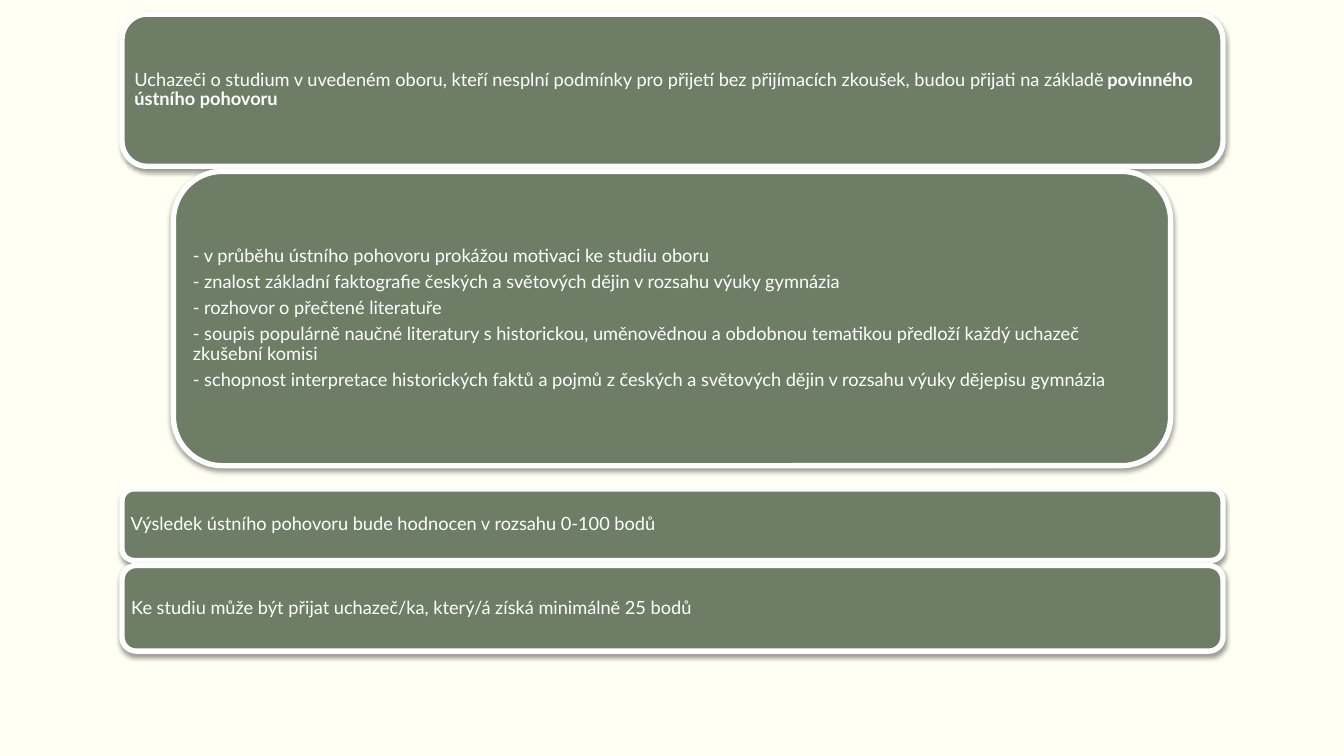
from lxml import etree
from pptx import Presentation
from pptx.dml.color import RGBColor
from pptx.enum import shapes, text
from pptx.oxml import ns
from pptx.util import Inches, Pt

GREEN, WHITE, CREAM, BLACK = "6D7D66", "FFFFFF", "FFFFF3", "000000"
WIDE = (1.21, 10.92)
NARROW = (1.72, 9.89)

# Each panel: (left, width), top, height, paragraphs made of (wording, bold) spans
PANELS = [
    (WIDE, 0.14, 1.51, [[
        ("Uchazeči o studium v uvedeném oboru, kteří nesplní podmínky pro přijetí "
         "bez přijímacích zkoušek, budou přijati na základě", False),
        (" povinného ústního pohovoru", True)]]),
    (NARROW, 1.7, 2.92, [
        [("- v průběhu ústního pohovoru prokážou motivaci ke studiu oboru", False)],
        [("- znalost základní faktografie českých a světových dějin "
          "v rozsahu výuky gymnázia", False)],
        [("- rozhovor o přečtené literatuře", False)],
        [("- soupis populárně naučné literatury s historickou, uměnovědnou a obdobnou "
          "tematikou předloží každý uchazeč zkušební komisi", False)],
        [("- schopnost interpretace historických faktů a pojmů z českých a světových "
          "dějin v rozsahu výuky dějepisu gymnázia", False)]]),
    (WIDE, 4.85, 0.71, [[
        ("Výsledek ústního pohovoru bude hodnocen v rozsahu 0-100 bodů", False)]]),
    (WIDE, 5.61, 0.85, [[
        ("Ke studiu může být přijat uchazeč/ka, který/á získá minimálně 25 bodů", False)]]),
]


def paint(fill, color):
    fill.solid()
    fill.fore_color.rgb = RGBColor.from_string(color)


def add_shadow(shape):
    """Give the shape a soft shadow falling straight down."""
    shape.shadow.inherit = False
    effects = shape._element.spPr.find(ns.qn("a:effectLst"))
    shadow = etree.SubElement(effects, ns.qn("a:outerShdw"), blurRad=str(Pt(3.5)),
                              dist=str(Pt(2)), dir="5400000", rotWithShape="0")
    color = etree.SubElement(shadow, ns.qn("a:srgbClr"), val=BLACK)
    etree.SubElement(color, ns.qn("a:alpha"), val="38000")


def write_paragraphs(frame, paragraphs):
    frame.word_wrap = True
    frame.vertical_anchor = text.MSO_ANCHOR.MIDDLE
    frame.margin_left = frame.margin_right = Inches(0.05)
    frame.margin_top = frame.margin_bottom = Inches(0.05)
    for index, spans in enumerate(paragraphs):
        para = frame.add_paragraph() if index else frame.paragraphs[0]
        para.alignment = text.PP_ALIGN.LEFT
        para.line_spacing = 0.9
        para.space_after = Pt(4.5)
        for wording, bold in spans:
            span = para.add_run()
            span.text = wording
            span.font.name = "Lato"
            span.font.size = Pt(13)
            span.font.bold = bold
            paint(span.font.fill, WHITE)


def add_panel(page, box, paragraphs):
    panel = page.shapes.add_shape(shapes.MSO_SHAPE.ROUNDED_RECTANGLE,
                                  *[Inches(length) for length in box])
    paint(panel.fill, GREEN)
    paint(panel.line.fill, WHITE)
    panel.line.width = Pt(3.82)
    add_shadow(panel)
    write_paragraphs(panel.text_frame, paragraphs)


def main():
    deck = Presentation()
    deck.slide_width, deck.slide_height = Inches(13.33), Inches(7.5)
    page = deck.slides.add_slide(deck.slide_layouts[6])
    paint(page.background.fill, CREAM)
    for (left, width), top, height, paragraphs in PANELS:
        add_panel(page, (left, top, width, height), paragraphs)
    deck.save("out.pptx")


if __name__ == "__main__":
    main()
